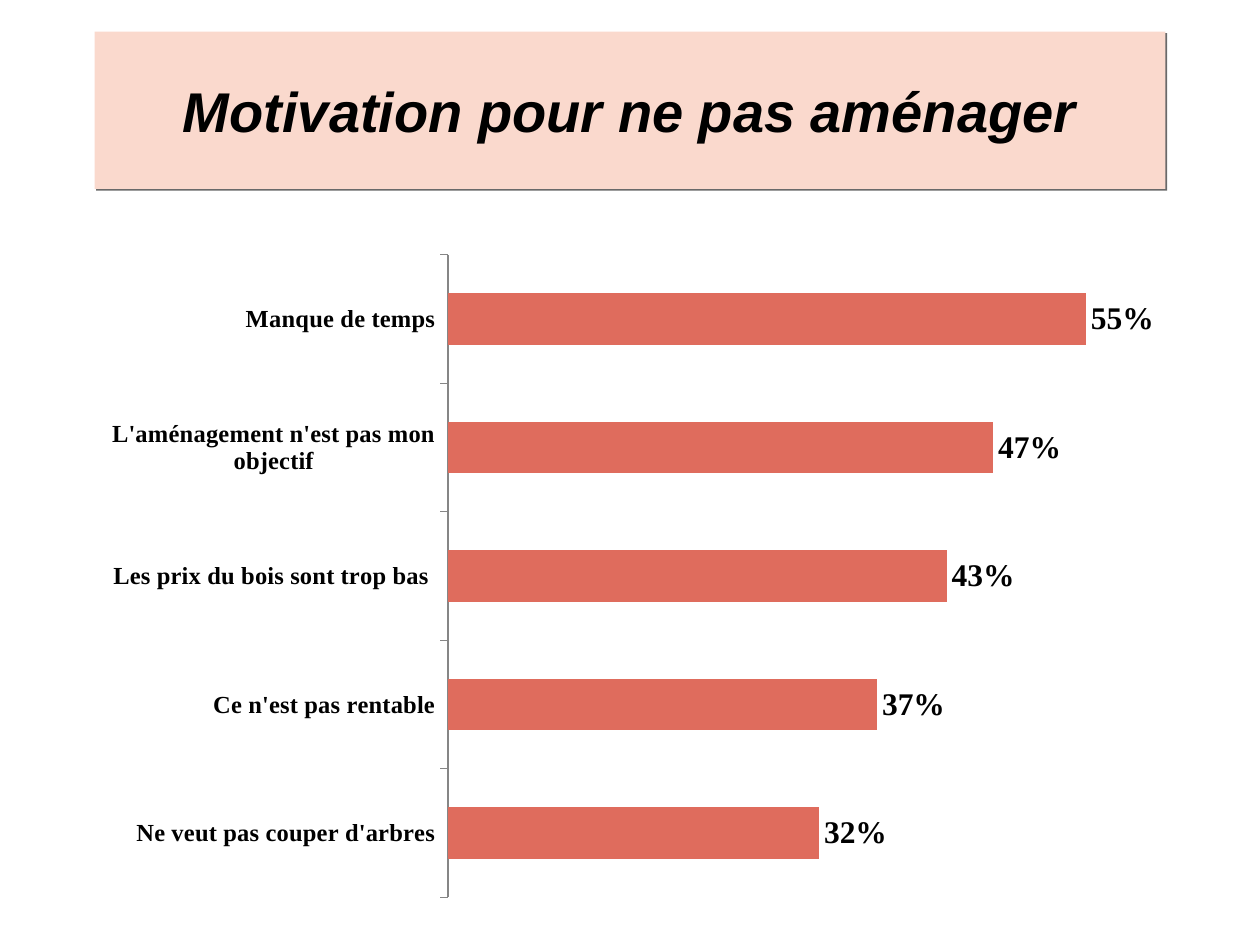
from lxml.etree import SubElement
from pptx import Presentation
from pptx.chart.data import CategoryChartData
from pptx.dml.color import RGBColor
from pptx.enum.chart import XL_CHART_TYPE as ChartType, XL_LABEL_POSITION as LabelPosition
from pptx.enum.chart import XL_TICK_MARK as TickMark
from pptx.enum.text import MSO_ANCHOR as Anchor, PP_ALIGN as Align
from pptx.oxml import parse_xml
from pptx.oxml.ns import nsdecls, qn
from pptx.util import Pt

EMU_PER_PX = 9525
BLACK = RGBColor(0x00, 0x00, 0x00)
PEACH = RGBColor(0xFA, 0xD9, 0xCD)
CORAL = RGBColor(0xDF, 0x6C, 0x5D)
GREY = RGBColor(0x86, 0x86, 0x86)
SHADOW_GREY = RGBColor(0x69, 0x69, 0x69)

TITLE = "Motivation pour ne pas aménager"
REASONS = {
    "Ne veut pas couper d'arbres": 0.32,
    "Ce n'est pas rentable": 0.37,
    "Les prix du bois sont trop bas ": 0.43,
    "L'aménagement n'est pas mon objectif": 0.47,
    "Manque de temps": 0.55,
}


def px(length):
    """Turn a length in px into EMU."""
    return length * EMU_PER_PX


def style_font(font, name, size, bold=True, italic=False):
    """Give a font its face, size and black colour."""
    font.name = name
    font.size = Pt(size)
    font.bold = bold
    font.italic = italic
    font.color.rgb = BLACK


def add_shadow(shape):
    """Give a shape a hard shadow to the lower right."""
    shape.shadow.inherit = False
    effects = shape.element.spPr.find(qn("a:effectLst"))
    effects.append(parse_xml(
        f'<a:outerShdw {nsdecls("a")} dist="17960" dir="2700000" algn="ctr" rotWithShape="0">'
        f'<a:srgbClr val="{SHADOW_GREY}"/></a:outerShdw>'))


def set_title(slide, text, left, top, width, height):
    """Place and format the title banner."""
    title = slide.shapes.title
    title.left, title.top, title.width, title.height = map(px, (left, top, width, height))
    title.fill.solid()
    title.fill.fore_color.rgb = PEACH
    title.line.fill.background()
    add_shadow(title)
    frame = title.text_frame
    frame.text = text
    frame.word_wrap = True
    frame.vertical_anchor = Anchor.MIDDLE
    paragraph = frame.paragraphs[0]
    paragraph.alignment = Align.CENTER
    style_font(paragraph.runs[0].font, "Arial", 32, italic=True)


def set_plot_layout(chart, **fractions):
    """Fix the inner plot area as fractions of the chart."""
    plot_area = chart.element.chart.plotArea
    layout = plot_area.find(qn("c:layout"))
    if layout is None:
        layout = SubElement(plot_area, qn("c:layout"))
        plot_area.insert(0, layout)
    manual = SubElement(layout, qn("c:manualLayout"))
    settings = {"layoutTarget": "inner", "xMode": "edge", "yMode": "edge", **fractions}
    for tag, value in settings.items():
        SubElement(manual, qn(f"c:{tag}")).set("val", str(value))


def format_axes(chart):
    """Show the category axis and hide the value axis."""
    category_axis = chart.category_axis
    category_axis.major_tick_mark = TickMark.OUTSIDE
    category_axis.minor_tick_mark = TickMark.NONE
    category_axis.has_major_gridlines = False
    category_axis.format.line.color.rgb = GREY
    category_axis.format.line.width = Pt(0.75)
    style_font(category_axis.tick_labels.font, "Times New Roman", 14)
    value_axis = chart.value_axis
    value_axis.minimum_scale = 0
    value_axis.maximum_scale = 0.6
    value_axis.has_major_gridlines = False
    value_axis.tick_labels.number_format = "0%"
    value_axis.tick_labels.number_format_is_linked = False
    value_axis.visible = False


def format_bars(plot):
    """Colour the bars and put a percentage at the end of each."""
    plot.gap_width = 150
    plot.vary_by_categories = False
    series = plot.series[0]
    series.format.fill.solid()
    series.format.fill.fore_color.rgb = CORAL
    labels = series.data_labels
    labels.show_value = True
    labels.position = LabelPosition.OUTSIDE_END
    labels.number_format = "0%"
    labels.number_format_is_linked = False
    style_font(labels.font, "Times New Roman", 18)


def add_bar_chart(slide, values, left, top, width, height):
    """Add the horizontal bar chart of shares by reason."""
    data = CategoryChartData(number_format="0%")
    data.categories = list(values)
    data.add_series("Series 1", list(values.values()))
    frame = slide.shapes.add_chart(
        ChartType.BAR_CLUSTERED, *map(px, (left, top, width, height)), data)
    chart = frame.chart
    chart.has_legend = False
    chart.has_title = False
    style_font(chart.font, "Times New Roman", 18, bold=False)
    set_plot_layout(chart, x=0.33, y=0.02, w=0.65, h=0.96)
    format_axes(chart)
    format_bars(chart.plots[0])


def main():
    """Build the slide and save it."""
    presentation = Presentation()
    presentation.slide_width, presentation.slide_height = px(960), px(720)
    slide = presentation.slides.add_slide(presentation.slide_layouts[5])
    set_title(slide, TITLE, 72, 24, 816, 120)
    add_bar_chart(slide, REASONS, 72, 184, 816, 510)
    presentation.save("out.pptx")


if __name__ == "__main__":
    main()
